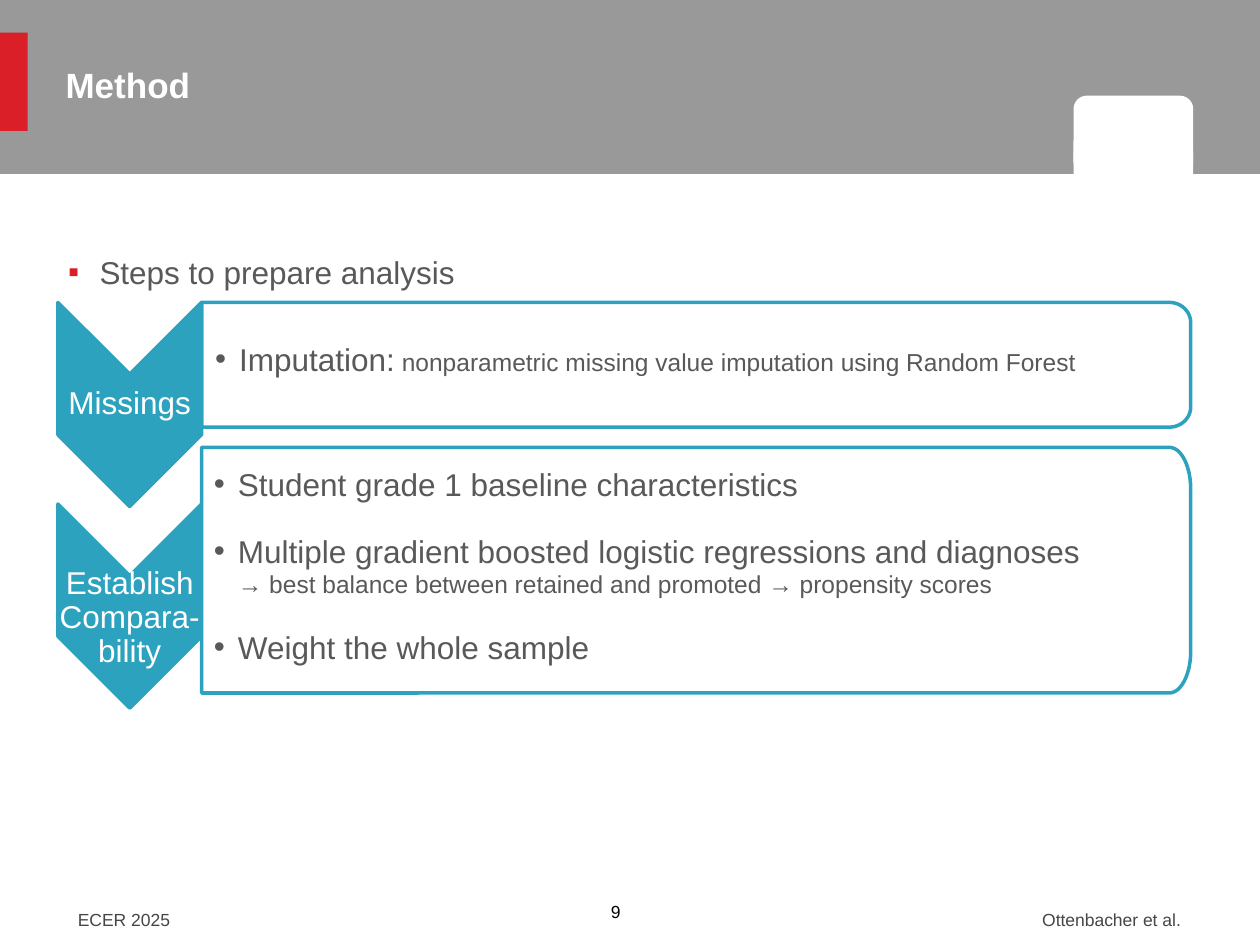
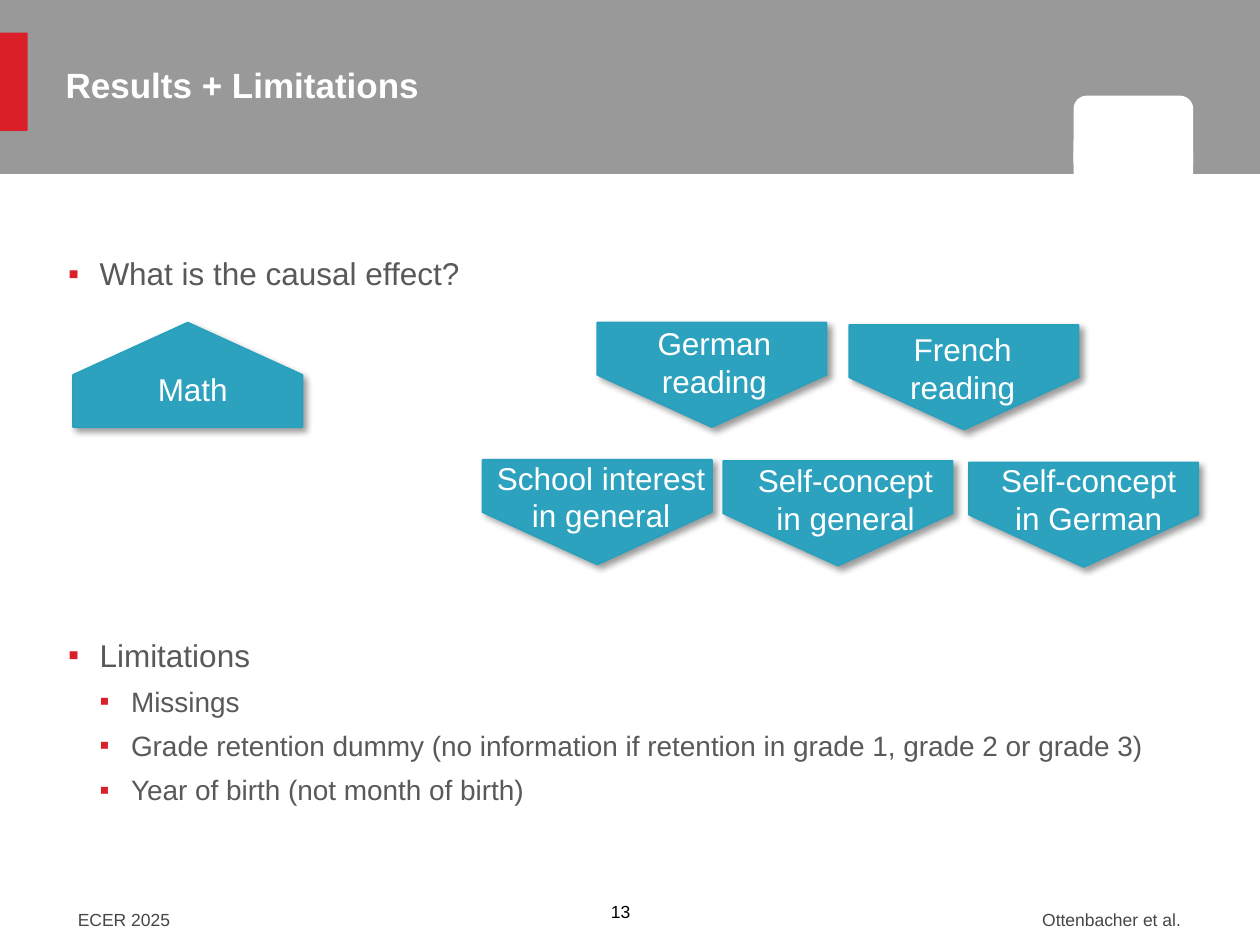
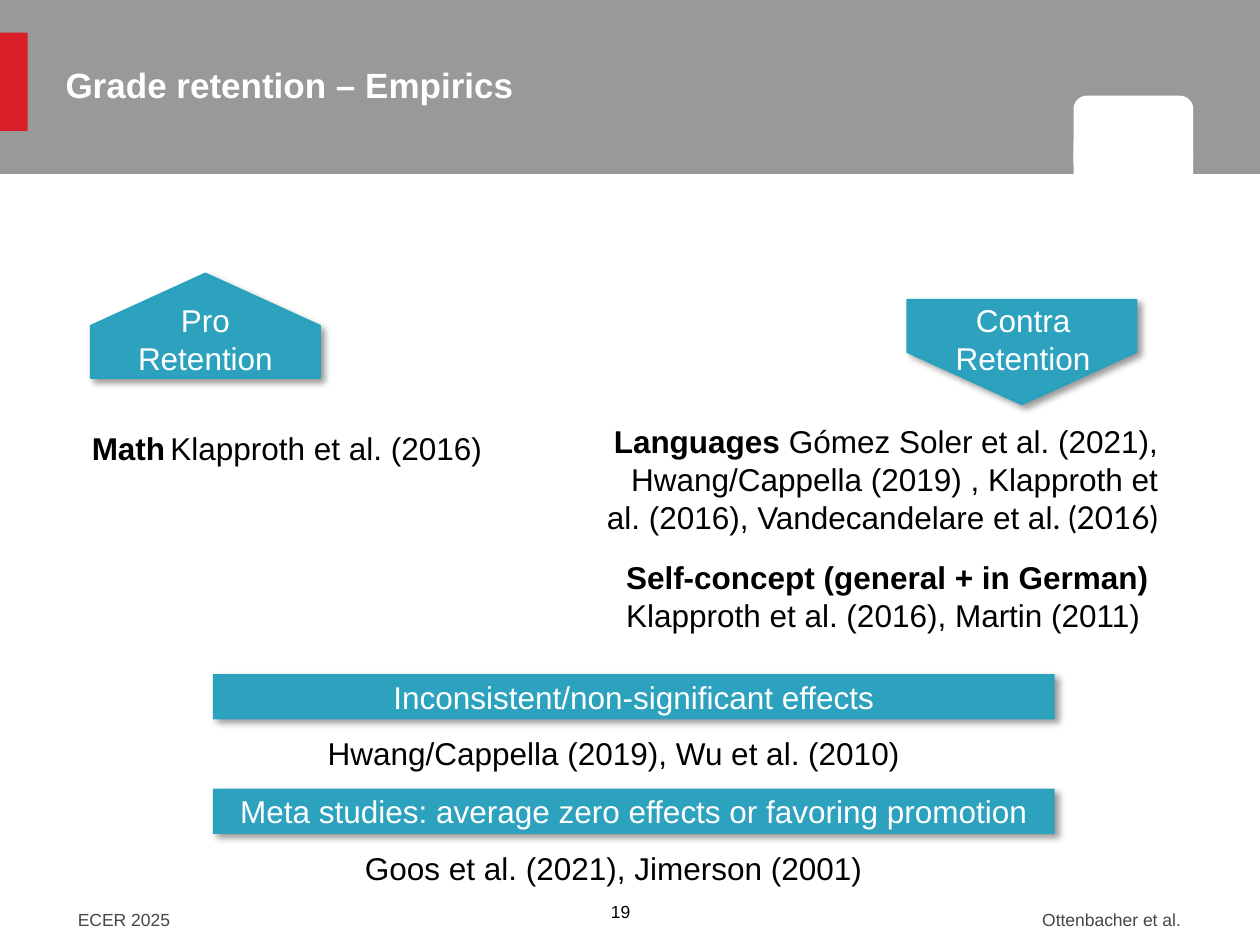
from math import cos, pi, sin

from lxml import etree
from pptx import Presentation
from pptx import util as u
from pptx.dml.color import RGBColor
from pptx.enum import shapes, text
from pptx.oxml import parse_xml
from pptx.oxml.ns import nsdecls, qn

COLORS = {
    "band": "999999", "accent": "DA1F28", "teal": "2DA2BF", "edge": "28A1BE",
    "body": "595959", "footer": "464646", "white": "FFFFFF", "black": "000000",
}
FONT = "Arial"
SHAPE = shapes.MSO_SHAPE
ALIGN = text.PP_ALIGN
ANCHOR = text.MSO_ANCHOR
MARGIN = {"margin_left": 0.1, "margin_top": 0.05, "margin_right": 0.1, "margin_bottom": 0.05}
NO_MARGIN = dict.fromkeys(MARGIN, 0)


# Shared helpers

def color(name):
    return RGBColor.from_string(COLORS[name])


def apply(target, values):
    for name, value in values.items():
        setattr(target, name, value)


def inches(values):
    return [u.Inches(value) for value in values]


def add_bullet(para, char, left, hang, tint):
    props = para._p.get_or_add_pPr()
    props.set("marL", str(u.Inches(left)))
    props.set("indent", str(-u.Inches(hang)))
    bullet_color = etree.SubElement(props, qn("a:buClr"))
    etree.SubElement(bullet_color, qn("a:srgbClr"), val=COLORS[tint])
    etree.SubElement(props, qn("a:buFont"), typeface=FONT)
    etree.SubElement(props, qn("a:buChar"), char=char)


def write(frame, paras, size=18, tint="black", margins=MARGIN, anchor=ANCHOR.TOP, **layout):
    """Each paragraph is a string or a dict of runs, bullet and paragraph format."""
    apply(frame, {"word_wrap": True, "vertical_anchor": anchor})
    apply(frame, {name: u.Inches(value) for name, value in margins.items()})
    for index, entry in enumerate(paras):
        entry = {"runs": [(entry, {})]} if isinstance(entry, str) else entry
        para = frame.paragraphs[0] if index == 0 else frame.add_paragraph()
        if "bullet" in entry:
            add_bullet(para, *entry["bullet"])
        apply(para, {**layout, **entry.get("format", {})})
        for words, changes in entry["runs"]:
            if words == "\n":
                para.add_line_break()
                continue
            span = para.add_run()
            span.text = words
            span.font.color.rgb = color(tint)
            apply(span.font, {"name": FONT, "size": u.Pt(size), **changes})


def add_text(page, box, paras, **options):
    write(page.shapes.add_textbox(*inches(box)).text_frame, paras, **options)


def paint(shape, fill, line=None, width=1, shadow=False):
    shape.shadow.inherit = False
    shape.fill.solid()
    shape.fill.fore_color.rgb = color(fill)
    if line:
        shape.line.color.rgb = color(line)
        shape.line.width = u.Pt(width)
    else:
        shape.line.fill.background()
    if shadow:
        effects = shape.element.spPr.find(qn("a:effectLst"))
        effects.append(parse_xml(
            f'<a:outerShdw {nsdecls("a")} blurRad="50800" dist="38100" dir="2700000" '
            f'algn="tl" rotWithShape="0"><a:srgbClr val="{COLORS["black"]}">'
            '<a:alpha val="40000"/></a:srgbClr></a:outerShdw>'))


def add_block(page, box, fill, kind=SHAPE.RECTANGLE, **options):
    block = page.shapes.add_shape(kind, *inches(box))
    paint(block, fill, **options)
    return block


def add_outline(page, points, fill):
    start, *others = [inches(point) for point in points]
    builder = page.shapes.build_freeform(*start)
    builder.add_line_segments(others, close=True)
    outline = builder.convert_to_shape()
    paint(outline, fill, line="teal", width=2)
    return outline


# Regions

def add_page(deck, title, number):
    page = deck.slides.add_slide(deck.slide_layouts[5])
    # Header band, accent and tab
    add_block(page, (0, 0, 10, 1.38), "band")
    add_block(page, (0, 0.26, 0.22, 0.78), "accent")
    add_block(page, (8.52, 0.76, 0.95, 0.63), "white", SHAPE.ROUNDED_RECTANGLE)
    add_block(page, (8.52, 1.2, 0.95, 0.19), "white")
    # Footer
    add_text(page, (4.75, 7.1, 0.5, 0.27), [str(number)], size=10)
    for left, words, align in ((0.52, "ECER 2025", ALIGN.LEFT),
                               (5.44, "Ottenbacher et al.", ALIGN.RIGHT)):
        block = add_block(page, (left, 7.1, 4.03, 0.39), "white")
        write(block.text_frame, [words], size=10, tint="footer",
              anchor=ANCHOR.MIDDLE, alignment=align)
    # Title in front of the band
    heading = page.shapes.title
    heading.element.getparent().append(heading.element)
    apply(heading, dict(zip(("left", "top", "width", "height"), inches((0.52, 0.5, 7.48, 0.75)))))
    write(heading.text_frame, [{"runs": [(title, {"bold": True})]}], size=20,
          tint="white", margins=NO_MARGIN, alignment=ALIGN.LEFT)
    return page


def add_bullets(page, box, heading, items=()):
    paras = [{"runs": [(heading, {})], "bullet": ("▪", 0.25, 0.25, "accent")}]
    paras += [{"runs": [(item, {"size": u.Pt(16)})], "bullet": ("▪", 0.5, 0.25, "accent"),
               "format": {"space_before": u.Pt(6)}} for item in items]
    add_text(page, box, paras, tint="body", margins={**MARGIN, "margin_left": 0, "margin_right": 0})


def add_chevron(page, box, label, drop=0):
    left, top, width, height = box
    middle, right, notch = left + width / 2, left + width, width / 2
    chevron = add_outline(page, [
        (left, top), (middle, top + notch), (right, top), (right, top + height - notch),
        (middle, top + height), (left, top + height - notch)], "teal")
    write(chevron.text_frame, [label], tint="white", margins={**NO_MARGIN, "margin_top": drop},
          anchor=ANCHOR.MIDDLE, alignment=ALIGN.CENTER, line_spacing=0.9)


def add_panel(page, box, corner_height):
    """Panel with two elliptical corners on its right side."""
    left, top, width, height = box
    corner_width, steps = 0.17, 12
    center_x = left + width - corner_width
    angles = [pi / 2 * step / steps for step in range(steps + 1)]
    upper = [(center_x + corner_width * sin(a), top + corner_height * (1 - cos(a)))
             for a in angles]
    lower = [(x, 2 * top + height - y) for x, y in reversed(upper)]
    add_outline(page, [(left, top), *upper, *lower, (left, top + height)], "white")


def add_panel_text(page, box, entries):
    paras = [{"runs": runs, "bullet": ("•", 0.19, 0.19, "body"),
              "format": {"space_before": u.Pt(16.5)} if index else {}}
             for index, runs in enumerate(entries)]
    add_text(page, box, paras, tint="body")


def add_signpost(page, left, top, label, label_box, up=False):
    """Pentagon pointing up or down; label_box is offset x, offset y, width."""
    width, height = 1.82, 0.83
    shift = (width - height) / 2
    sign = add_block(page, (left + shift, top - shift, height, width), "teal",
                     SHAPE.PENTAGON, line="edge", shadow=True)
    sign.rotation = 270 if up else 90
    dx, dy, label_width = label_box
    add_text(page, (left + dx, top + dy, label_width, 0.71), label.split("\n"),
             tint="white", alignment=ALIGN.CENTER)


def add_finding(page, top, finding, studies):
    bar = add_block(page, (1.69, top, 6.68, 0.36), "teal", shadow=True)
    write(bar.text_frame, [finding], tint="white", anchor=ANCHOR.MIDDLE, alignment=ALIGN.CENTER)
    add_text(page, (0.79, top + 0.43, 8.16, 0.4), [studies], alignment=ALIGN.CENTER)


# Slides

def build_method(deck):
    page = add_page(deck, "Method", 9)
    small = {"size": u.Pt(14)}
    add_panel(page, (1.6, 2.4, 7.85, 0.99), 0.16)
    add_chevron(page, (0.46, 2.4, 1.14, 1.62), "Missings")
    add_chevron(page, (0.46, 4, 1.14, 1.62), "Establish Compara-bility", drop=0.19)
    add_panel(page, (1.6, 3.55, 7.85, 1.95), 0.33)
    add_panel_text(page, (1.61, 2.65, 7.84, 0.4), [
        [("Imputation:", {}),
         (" nonparametric missing value imputation using Random Forest", small)]])
    add_panel_text(page, (1.6, 3.64, 7.67, 1.75), [
        [("Student grade 1 baseline characteristics", {})],
        [("Multiple gradient boosted logistic regressions and diagnoses", {}), ("\n", {}),
         ("→ best balance between retained and promoted → propensity scores", small)],
        [("Weight the whole sample", {})]])
    add_bullets(page, (0.54, 1.96, 3.3, 0.4), "Steps to prepare analysis")


def build_results(deck):
    page = add_page(deck, "Results + Limitations", 13)
    add_bullets(page, (0.54, 1.97, 8.9, 0.4), "What is the causal effect?")
    for left, top, label, label_box in (
            (4.74, 2.56, "German reading", (-0.05, -0.04, 1.96)),
            (6.74, 2.58, "French reading", (0.1, -0.01, 1.6)),
            (3.83, 3.65, "School interest in general", (-0.04, -0.06, 1.96)),
            (5.74, 3.66, "Self-concept in general", (0.06, -0.05, 1.82)),
            (7.69, 3.67, "Self-concept in German", (0.04, -0.06, 1.82))):
        add_signpost(page, left, top, label, label_box)
    add_signpost(page, 0.58, 2.56, "Math", (0.04, 0.33, 1.82), up=True)
    add_bullets(page, (0.54, 5, 8.9, 1.5), "Limitations", [
        "Missings",
        "Grade retention dummy (no information if retention in grade 1, grade 2 or grade 3)",
        "Year of birth (not month of birth)"])


def build_empirics(deck):
    page = add_page(deck, "Grade retention – Empirics", 19)
    bold = {"bold": True}
    add_signpost(page, 7.2, 2.38, "Contra\nRetention", (0.01, -0.04, 1.82))
    add_signpost(page, 0.72, 2.17, "Pro\nRetention", (0, 0.17, 1.82), up=True)
    # Studies for each side
    add_text(page, (0.63, 3.36, 4.28, 0.4), [{"runs": [
        ("Math", bold), (" ", {"size": u.Pt(10.5)}), ("Klapproth et al. (2016)", {})]}])
    add_text(page, (4.67, 3.3, 4.62, 1.01), [{"runs": [
        ("Languages ", bold),
        ("Gómez Soler et al. (2021), Hwang/Cappella (2019) , Klapproth et al. (2016), "
         "Vandecandelare et al", {}),
        (". (2016)", {"name": "Lato"})]}], alignment=ALIGN.RIGHT)
    add_text(page, (4.87, 4.38, 4.41, 0.71), [
        {"runs": [("Self-concept (general + in German)", bold)]},
        "Klapproth et al. (2016), Martin (2011)"])
    # Overall findings
    add_finding(page, 5.35, "Inconsistent/non-significant effects",
                "Hwang/Cappella (2019), Wu et al. (2010)")
    add_finding(page, 6.26, "Meta studies: average zero effects or favoring promotion",
                "Goos et al. (2021), Jimerson (2001)")


def main():
    deck = Presentation()
    apply(deck, {"slide_width": u.Inches(10), "slide_height": u.Inches(7.5)})
    for build in (build_method, build_results, build_empirics):
        build(deck)
    deck.save("out.pptx")


if __name__ == "__main__":
    main()
